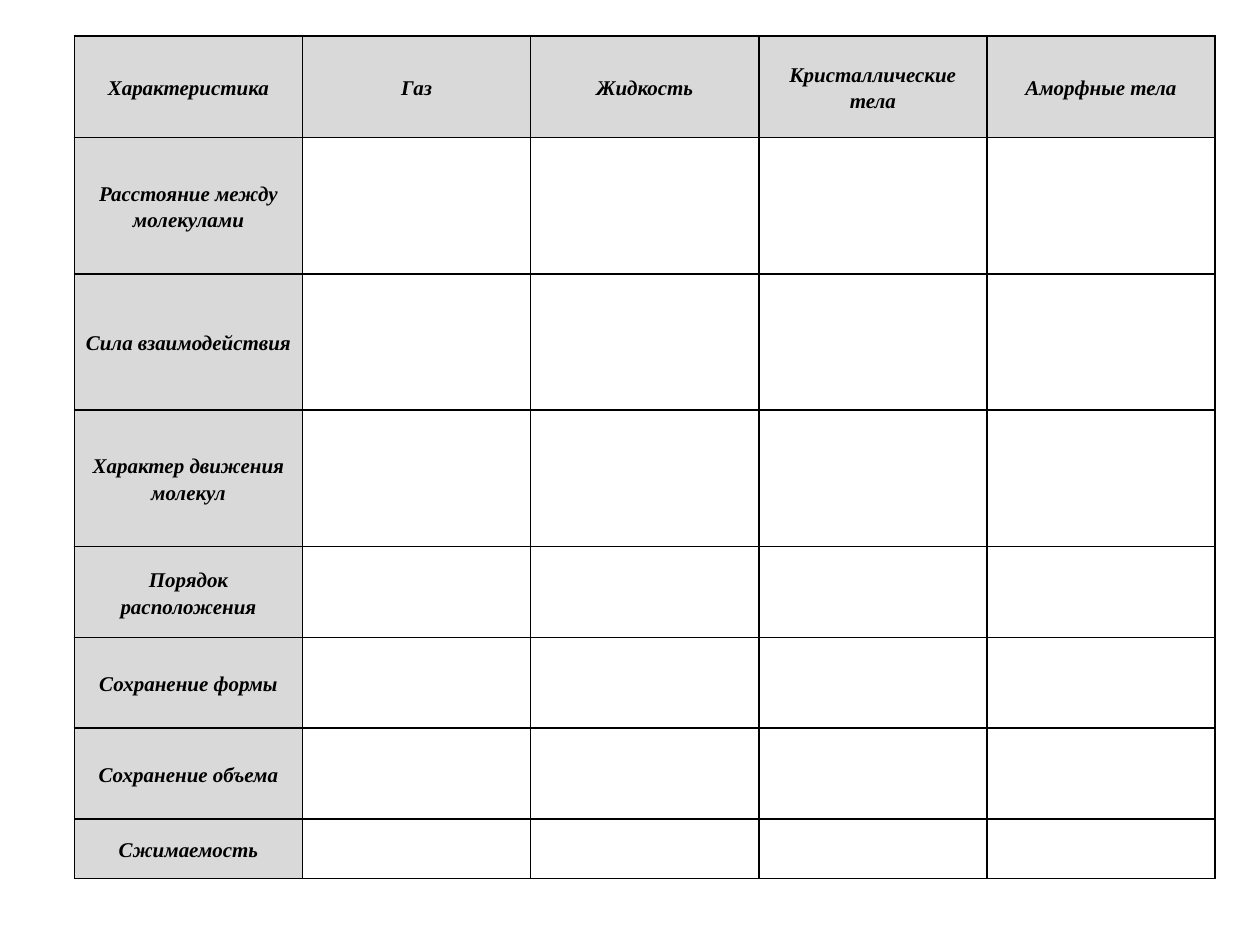
from dataclasses import dataclass

from lxml.etree import SubElement
from pptx import Presentation
from pptx.dml.color import RGBColor
from pptx.enum.text import MSO_ANCHOR, PP_ALIGN
from pptx.oxml.ns import qn
from pptx.table import _Cell as Cell
from pptx.util import Cm, Pt

COLORS = {"heading": "D9D9D9", "text": "000000", "border": "000000"}
FONT = "Times New Roman"
COLUMN_WIDTH = 4.6


@dataclass
class Row:
    label: str
    height: float


STATES = ["Газ", "Жидкость", "Кристаллические тела", "Аморфные тела"]
ROWS = [
    Row("Характеристика", 2.04),
    Row("Расстояние между молекулами", 2.75),
    Row("Сила взаимодействия", 2.75),
    Row("Характер движения молекул", 2.75),
    Row("Порядок расположения", 1.83),
    Row("Сохранение формы", 1.83),
    Row("Сохранение объема", 1.83),
    Row("Сжимаемость", 1.2),
]


def add_borders(cell: Cell) -> None:
    """Outline the cell; must run before its fill is set."""
    properties = cell._tc.get_or_add_tcPr()
    for side in ("lnL", "lnR", "lnT", "lnB"):
        line = SubElement(properties, qn(f"a:{side}"), w=str(Pt(1)))
        fill = SubElement(line, qn("a:solidFill"))
        SubElement(fill, qn("a:srgbClr"), val=COLORS["border"])


def write_heading(cell: Cell, text: str) -> None:
    cell.fill.solid()
    cell.fill.fore_color.rgb = RGBColor.from_string(COLORS["heading"])
    cell.vertical_anchor = MSO_ANCHOR.MIDDLE
    cell.margin_left = cell.margin_right = Cm(0.18)
    cell.margin_top = cell.margin_bottom = 0
    cell.text_frame.text = text
    para = cell.text_frame.paragraphs[0]
    para.alignment = PP_ALIGN.CENTER
    para.line_spacing = 1.15
    font = para.runs[0].font
    font.name, font.size = FONT, Pt(12)
    font.bold = font.italic = True
    font.color.rgb = RGBColor.from_string(COLORS["text"])


def main() -> None:
    deck = Presentation()
    deck.slide_width, deck.slide_height = Cm(25.4), Cm(19.05)
    page = deck.slides.add_slide(deck.slide_layouts[6])

    column_count = len(STATES) + 1
    table = page.shapes.add_table(
        len(ROWS), column_count, Cm(1.5), Cm(0.73),
        Cm(COLUMN_WIDTH * column_count), Cm(sum(row.height for row in ROWS)),
    ).table
    table.horz_banding = False
    for column in table.columns:
        column.width = Cm(COLUMN_WIDTH)
    for table_row, row in zip(table.rows, ROWS):
        table_row.height = Cm(row.height)

    for cell in table.iter_cells():
        add_borders(cell)
        cell.fill.background()
    for index, row in enumerate(ROWS):
        write_heading(table.cell(index, 0), row.label)
    for index, state in enumerate(STATES, start=1):
        write_heading(table.cell(0, index), state)

    deck.save("out.pptx")


if __name__ == "__main__":
    main()
